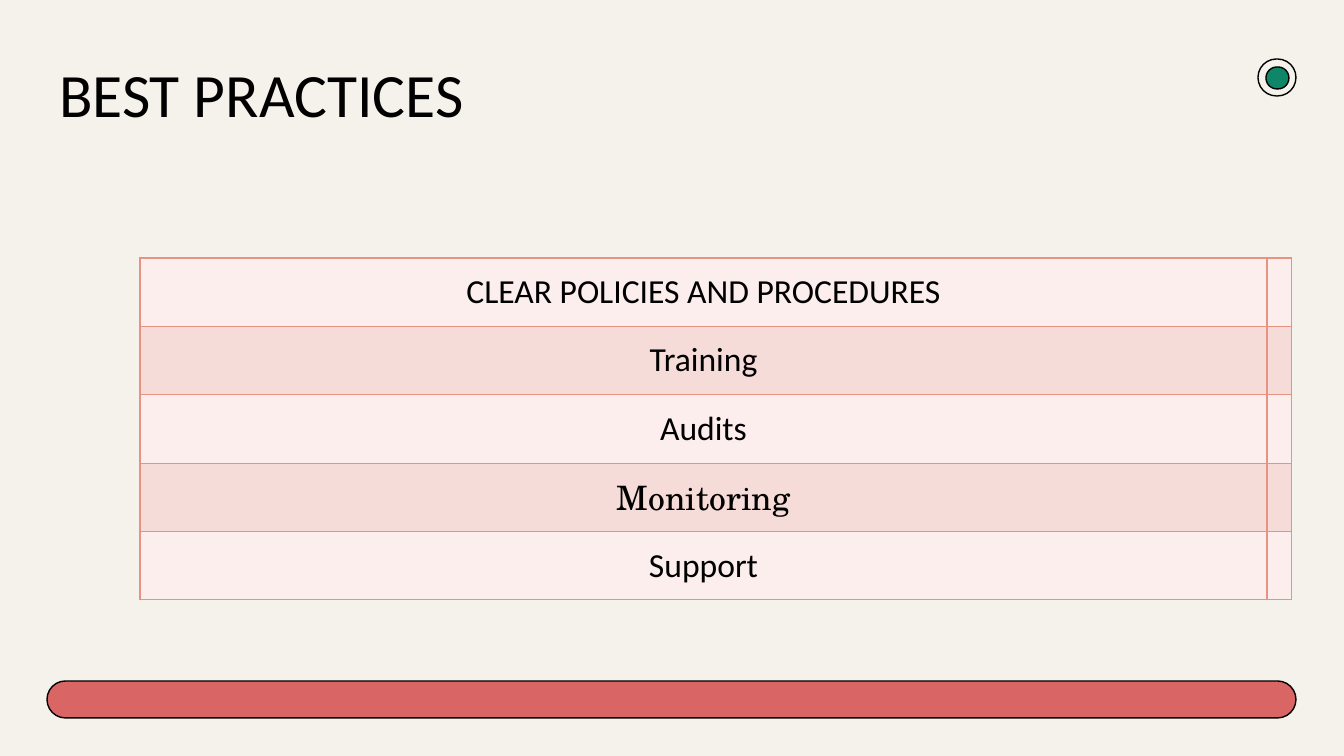
"""Build the best practices slide."""
from lxml import etree
from pptx import Presentation, util as u
from pptx.dml.color import RGBColor
from pptx.enum import shapes, text
from pptx.oxml.ns import qn

EMU_PER_PX = 914400 / 100.8
COLORS = {"page": "F5F2EB", "ink": "000000", "bar": "D96564", "dot": "108669",
          "border": "E89284", "light": "FBEEED", "dark": "F6DCD9"}
BODY_FONT = "Calibri"
PRACTICES = [("CLEAR POLICIES AND PROCEDURES", BODY_FONT), ("Training", BODY_FONT),
             ("Audits", BODY_FONT), ("Monitoring", "TeX Gyre Schola"),
             ("Support", BODY_FONT)]
PILLS = [((47, 681, 1249, 37), "bar"), ((1258, 59, 38, 37), None),
         ((1266, 67, 23, 22), "dot")]


def px(n):
    return u.Emu(round(n * EMU_PER_PX))


def rgb(name):
    return RGBColor.from_string(COLORS[name])


def paint(fill, name):
    fill.solid()
    fill.fore_color.rgb = rgb(name)


def write(tf, words, name, size, **para_format):
    p = tf.paragraphs[0]
    for key, value in para_format.items():
        setattr(p, key, value)
    r = p.add_run()
    r.text = words
    for key, value in {"name": name, "size": u.Pt(size), "bold": False}.items():
        setattr(r.font, key, value)
    r.font.color.rgb = rgb("ink")


def add_pill(s, box, color):
    sp = s.shapes.add_shape(shapes.MSO_SHAPE.ROUNDED_RECTANGLE, *map(px, box))
    sp.adjustments[0] = 0.5
    sp.shadow.inherit = False
    if color:
        paint(sp.fill, color)
    else:
        sp.fill.background()
    sp.line.color.rgb = rgb("ink")
    sp.line.width = u.Pt(1)


def set_title(s, words):
    sp = s.shapes.title
    box = {"left": 49, "top": 59, "width": 1247, "height": 157}
    for key, value in box.items():
        setattr(sp, key, px(value))
    tf = sp.text_frame
    frame = {"word_wrap": True, "vertical_anchor": text.MSO_ANCHOR.TOP,
             "auto_size": text.MSO_AUTO_SIZE.NONE}
    for key, value in frame.items():
        setattr(tf, key, value)
    write(tf, words, BODY_FONT, 44, alignment=text.PP_ALIGN.LEFT, line_spacing=0.9)


def add_borders(cell):
    tc_pr = cell._tc.get_or_add_tcPr()
    for side in ("a:lnL", "a:lnR", "a:lnT", "a:lnB"):
        ln = etree.SubElement(tc_pr, qn(side), w=str(u.Pt(1)))
        fill = etree.SubElement(ln, qn("a:solidFill"))
        etree.SubElement(fill, qn("a:srgbClr"), val=COLORS["border"])


def add_practices(s):
    frame = s.shapes.add_table(len(PRACTICES), 2, *map(px, (140, 258, 1151, 342)))
    table = frame.table
    table.first_row = table.horz_banding = False
    for column, width in zip(table.columns, (1127, 24)):
        column.width = px(width)
    for i, (words, font) in enumerate(PRACTICES):
        for cell in table.rows[i].cells:
            add_borders(cell)
            paint(cell.fill, "dark" if i % 2 else "light")
            cell.vertical_anchor = text.MSO_ANCHOR.MIDDLE
        write(table.cell(i, 0).text_frame, words, font, 24,
              alignment=text.PP_ALIGN.CENTER)


def main():
    prs = Presentation()
    prs.slide_width, prs.slide_height = px(1344), px(756)
    s = prs.slides.add_slide(prs.slide_layouts[5])
    paint(s.background.fill, "page")
    for box, color in PILLS:
        add_pill(s, box, color)
    set_title(s, "BEST PRACTICES")
    add_practices(s)
    prs.save("out.pptx")


if __name__ == "__main__":
    main()
